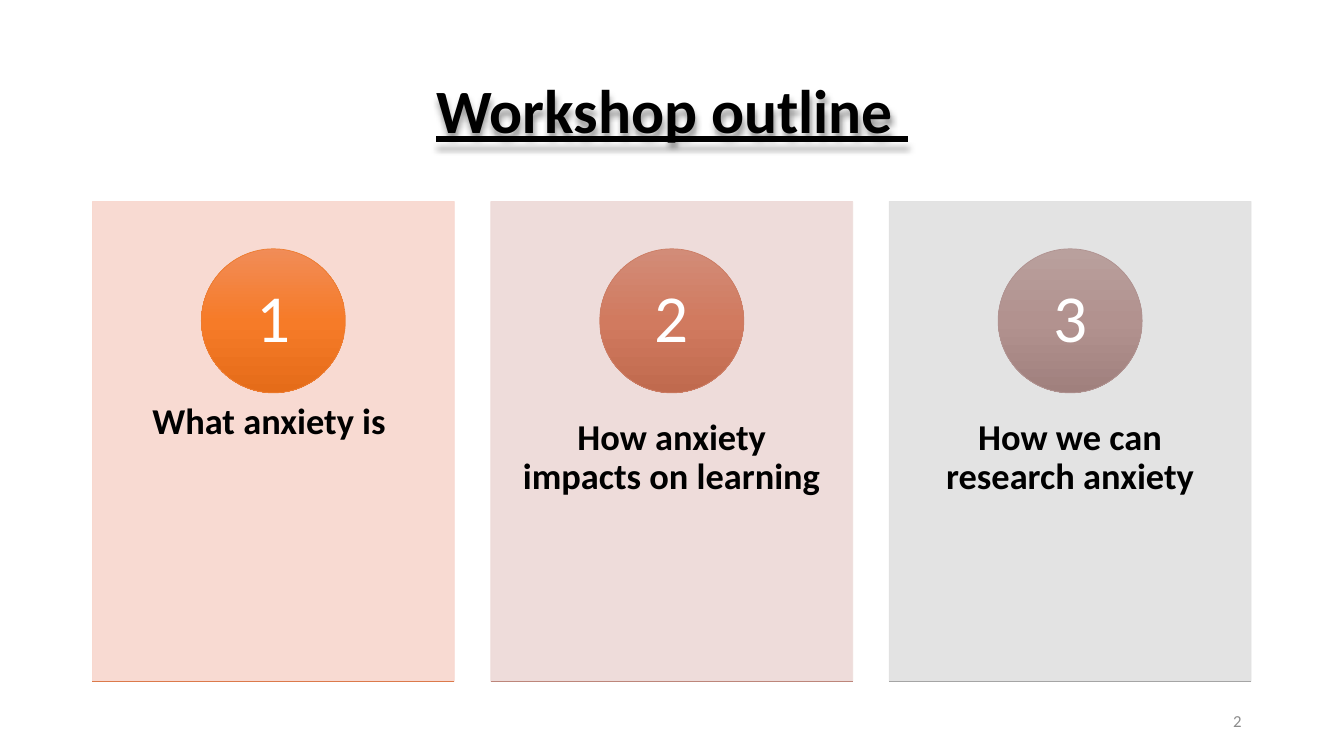
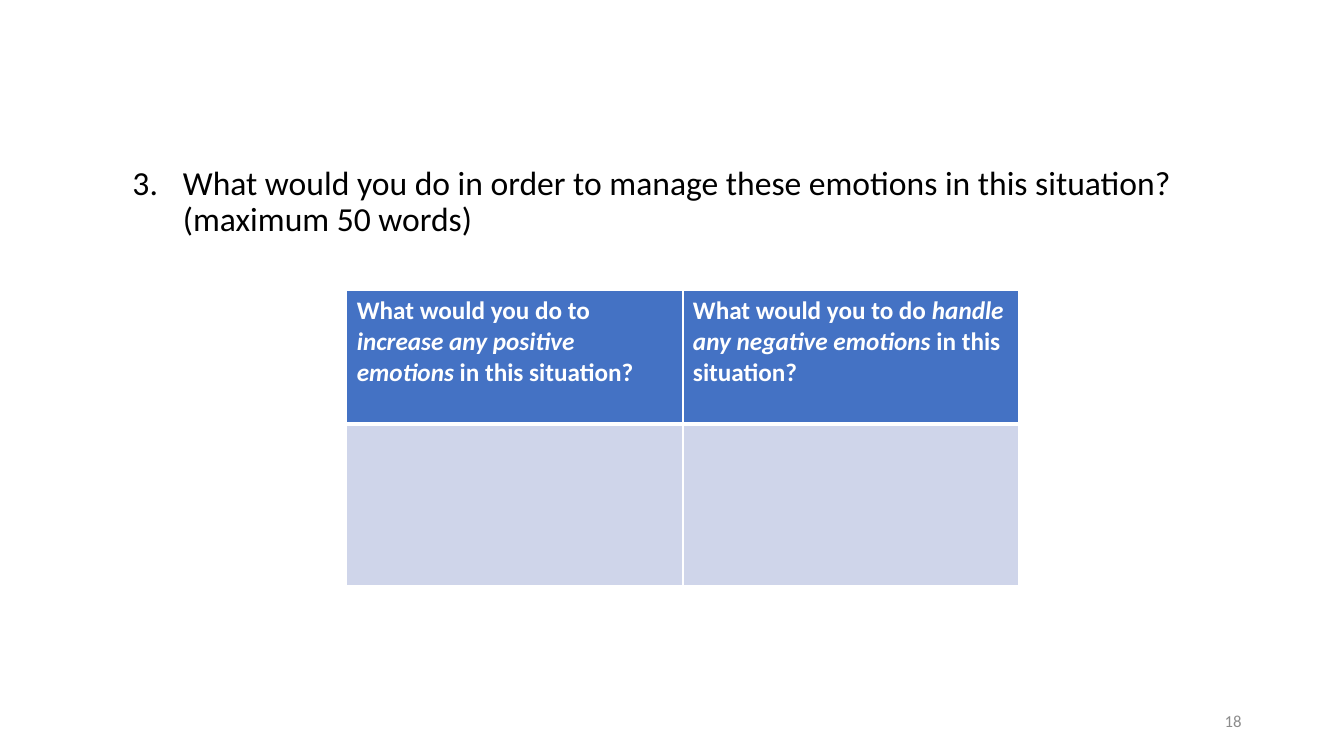
from copy import deepcopy
from dataclasses import dataclass

from lxml.etree import SubElement as Sub
from pptx import Presentation
from pptx.dml.color import RGBColor
from pptx.enum.shapes import MSO_CONNECTOR as Link, MSO_SHAPE as Form
from pptx.enum.text import MSO_ANCHOR as Anchor, PP_ALIGN as Align
from pptx.oxml.ns import qn
from pptx.shapes.autoshape import Shape
from pptx.slide import Slide
from pptx.table import _Cell as Cell
from pptx.text.text import TextFrame, _Paragraph as Para
from pptx.util import Cm, Pt

FONT = "Calibri"
BLACK = RGBColor(0x00, 0x00, 0x00)
WHITE = RGBColor(0xFF, 0xFF, 0xFF)
GREY = RGBColor(0x8C, 0x8C, 0x8C)
BLUE = RGBColor(0x44, 0x72, 0xC4)
PALE = RGBColor(0xCF, 0xD5, 0xEA)

LEFT, WIDE = 2.33, 29.21
CARD_TOP, CARD_W, CARD_H, STEP = 5.08, 9.12, 12.09, 10.04
DISC, DISC_TOP = 3.63, 6.27
LABEL_TOP, LABEL_H = 9.65, 7.26


@dataclass(frozen=True)
class Card:
    label: str
    back: RGBColor
    blend: tuple[RGBColor, RGBColor, RGBColor]
    rim: RGBColor
    base: RGBColor


CARDS = (
    Card("What anxiety is ", RGBColor(0xF8, 0xD7, 0xCE),
         (RGBColor(0xF1, 0x8C, 0x57), RGBColor(0xF6, 0x7B, 0x28),
          RGBColor(0xE5, 0x6C, 0x19)),
         RGBColor(0xED, 0x7D, 0x31), RGBColor(0xDC, 0x7A, 0x4B)),
    Card("How anxiety impacts on learning", RGBColor(0xED, 0xD9, 0xD7),
         (RGBColor(0xD2, 0x8C, 0x78), RGBColor(0xD1, 0x7A, 0x5F),
          RGBColor(0xC0, 0x6A, 0x4E)),
         RGBColor(0xCC, 0x7D, 0x64), RGBColor(0xBD, 0x86, 0x7B)),
    Card("How we can research anxiety", RGBColor(0xE1, 0xE1, 0xE1),
         (RGBColor(0xB9, 0xA0, 0x9D), RGBColor(0xB2, 0x92, 0x8F),
          RGBColor(0xA0, 0x80, 0x7D)),
         RGBColor(0xB0, 0x93, 0x91), RGBColor(0xA5, 0xA5, 0xA5)),
)

HEADS = (
    ("What would you do to ", "increase any positive emotions",
     " in this situation?"),
    ("What would you to do ", "handle any negative emotions",
     " in this situation?"),
)


def write(frame: TextFrame, *runs: str, size: float, color: RGBColor = BLACK,
          bold: bool = False, under: bool = False,
          align: Align = Align.LEFT, anchor: Anchor = Anchor.TOP,
          lead: float = 1.0, pad: tuple[float, float] = (0.25, 0.13)) -> Para:
    """Fill a frame with one paragraph; every second run is italic."""
    frame.word_wrap = True
    frame.vertical_anchor = anchor
    frame.margin_left = frame.margin_right = Cm(pad[0])
    frame.margin_top = frame.margin_bottom = Cm(pad[1])
    para = frame.paragraphs[0]
    para.alignment, para.line_spacing = align, lead
    for i, text in enumerate(runs):
        run = para.add_run()
        run.text = text
        font = run.font
        font.name, font.size, font.color.rgb = FONT, Pt(size), color
        font.bold, font.underline, font.italic = bold, under, i % 2 == 1
    return para


def add_box(slide: Slide, x: float, y: float, w: float, h: float) -> Shape:
    return slide.shapes.add_textbox(Cm(x), Cm(y), Cm(w), Cm(h))


def add_form(slide: Slide, form: Form, x: float, y: float, w: float, h: float,
             edge: RGBColor) -> Shape:
    shape = slide.shapes.add_shape(form, Cm(x), Cm(y), Cm(w), Cm(h))
    shape.shadow.inherit = False
    shape.line.color.rgb, shape.line.width = edge, Pt(0.5)
    return shape


def fade(shape: Shape, share: int) -> None:
    """Set the opacity of fill and line in percent."""
    for tint in shape.element.spPr.iter(qn("a:srgbClr")):
        Sub(tint, qn("a:alpha"), val=str(share * 1000))


def blend(shape: Shape, tints: tuple[RGBColor, ...]) -> None:
    """Fill a shape from top to bottom with three evenly spaced tints."""
    shape.fill.gradient()
    shape.fill.gradient_angle = 270
    stops = shape.element.spPr.find(".//" + qn("a:gsLst"))
    stops.insert(1, deepcopy(stops[0]))
    for i, (stop, tint) in enumerate(zip(shape.fill.gradient_stops, tints)):
        stop.position, stop.color.rgb = i / 2, tint


def add_title(slide: Slide, text: str) -> None:
    box = add_box(slide, LEFT, 1.01, WIDE, 3.68)
    write(box.text_frame, text, size=44, bold=True, under=True, lead=0.9,
          align=Align.CENTER, anchor=Anchor.MIDDLE)
    glow = Sub(Sub(box.element.spPr, qn("a:effectLst")), qn("a:outerShdw"),
               blurRad=str(Pt(4)), dist=str(Pt(4)), dir="5400000",
               algn="t", rotWithShape="0")
    Sub(Sub(glow, qn("a:srgbClr"), val=str(BLACK)), qn("a:alpha"), val="40000")


def add_page(slide: Slide, num: int) -> None:
    box = add_box(slide, 23.92, 17.65, 7.62, 1.01)
    write(box.text_frame, str(num), size=12, color=GREY, align=Align.RIGHT,
          anchor=Anchor.MIDDLE)


def add_card(slide: Slide, num: int, card: Card) -> None:
    x = LEFT + (num - 1) * STEP
    back = add_form(slide, Form.RECTANGLE, x, CARD_TOP, CARD_W, CARD_H,
                    card.back)
    back.fill.solid()
    back.fill.fore_color.rgb = card.back
    fade(back, 90)

    label = add_box(slide, x, LABEL_TOP, CARD_W, LABEL_H)
    write(label.text_frame, card.label, size=26, bold=True, lead=0.9,
          align=Align.CENTER, pad=(0.71, 0.91))

    disc = add_form(slide, Form.OVAL, x + (CARD_W - DISC) / 2, DISC_TOP,
                    DISC, DISC, card.rim)
    blend(disc, card.blend)
    write(disc.text_frame, str(num), size=48, color=WHITE, lead=0.9,
          align=Align.CENTER, anchor=Anchor.MIDDLE, pad=(0.28, 0.03))

    y = Cm(CARD_TOP + CARD_H)
    base = slide.shapes.add_connector(Link.STRAIGHT, Cm(x), y,
                                      Cm(x + CARD_W), y)
    base.line.color.rgb, base.line.width = card.base, Pt(0.5)
    Sub(base.element.spPr, qn("a:effectLst"))


def add_item(slide: Slide, num: int, text: str) -> None:
    """Add a numbered question with a hanging indent."""
    box = add_box(slide, LEFT, 4.06, WIDE, 13.11)
    para = write(box.text_frame, text, size=24, lead=0.9)
    para.space_before = Pt(5)
    props = para._p.get_or_add_pPr()
    props.set("marL", str(Cm(2.03)))
    props.set("indent", str(Cm(-1.27)))
    Sub(props, qn("a:buFont"), typeface="+mj-lt")
    Sub(props, qn("a:buAutoNum"), type="arabicPeriod", startAt=str(num))


def style(cell: Cell, fill: RGBColor, top: float, low: float) -> None:
    """Give a cell white borders and a plain fill."""
    props = cell._tc.get_or_add_tcPr()
    for side, width in (("L", 1), ("R", 1), ("T", top), ("B", low)):
        line = Sub(props, qn(f"a:ln{side}"), w=str(Pt(width)))
        Sub(Sub(line, qn("a:solidFill")), qn("a:srgbClr"), val=str(WHITE))
    cell.fill.solid()
    cell.fill.fore_color.rgb = fill


def add_grid(slide: Slide) -> None:
    table = slide.shapes.add_table(2, len(HEADS), Cm(8.74), Cm(7.32),
                                   Cm(16.94), Cm(7.43)).table
    table.first_row = table.horz_banding = False
    table.rows[0].height, table.rows[1].height = Cm(3.36), Cm(4.07)
    for col, runs in enumerate(HEADS):
        head = table.cell(0, col)
        style(head, BLUE, 1, 3)
        write(head.text_frame, *runs, size=18, color=WHITE, bold=True)
        style(table.cell(1, col), PALE, 3, 1)


def main() -> None:
    deck = Presentation()
    deck.slide_width, deck.slide_height = Cm(33.87), Cm(19.05)
    blank = deck.slide_layouts[6]

    outline = deck.slides.add_slide(blank)
    add_title(outline, "Workshop outline ")
    for num, card in enumerate(CARDS, 1):
        add_card(outline, num, card)
    add_page(outline, 2)

    task = deck.slides.add_slide(blank)
    add_item(task, 3, "What would you do in order to manage these emotions "
                      "in this situation? (maximum 50 words)")
    add_page(task, 18)
    add_grid(task)

    deck.save("out.pptx")


if __name__ == "__main__":
    main()
